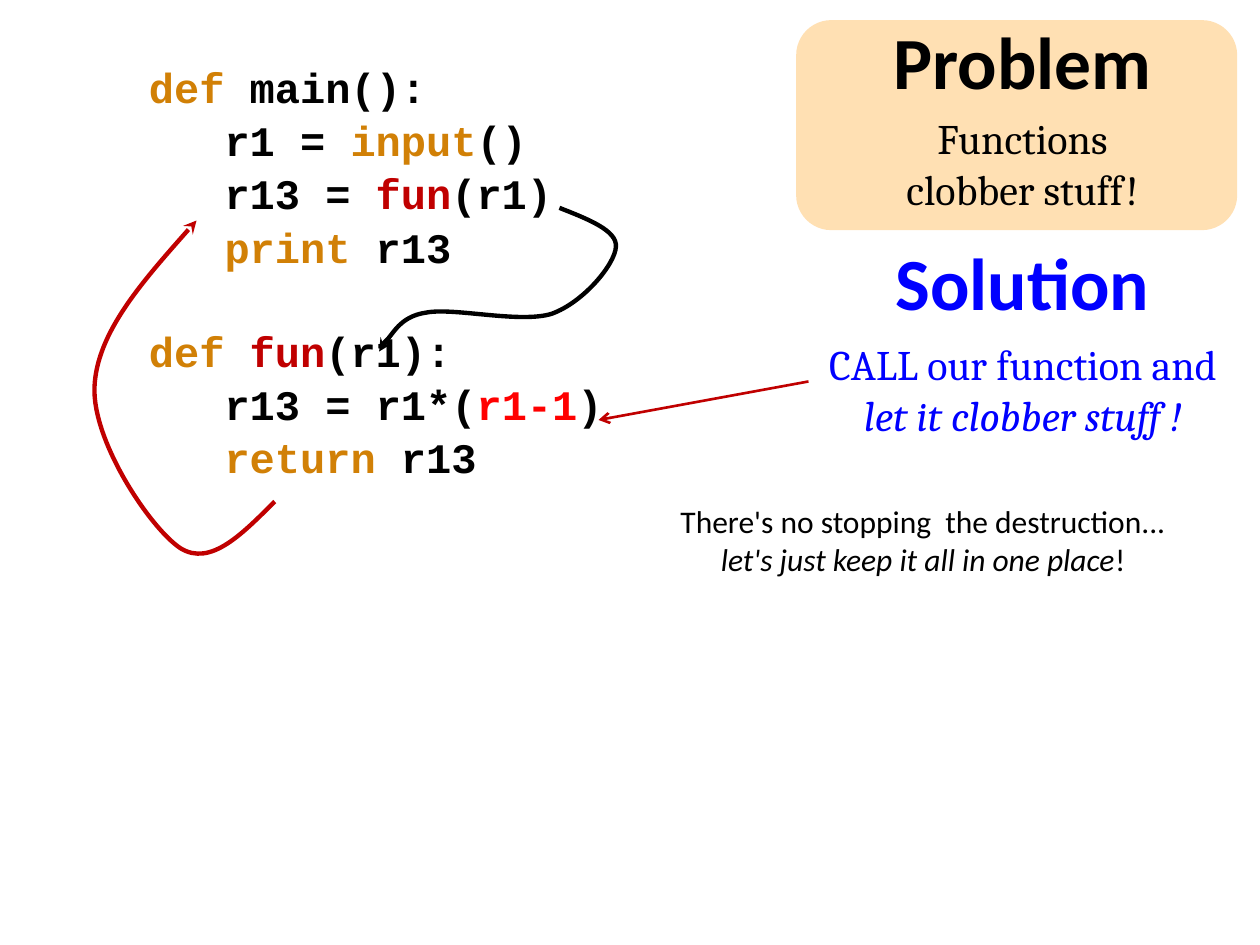
from pptx import Presentation
from pptx.dml.color import RGBColor
from pptx.enum.shapes import MSO_CONNECTOR, MSO_SHAPE
from pptx.enum.text import MSO_ANCHOR, MSO_AUTO_SIZE, PP_ALIGN
from pptx.oxml.ns import qn
from pptx.util import Pt
from lxml import etree

BLACK = RGBColor(0x00, 0x00, 0x00)
BLUE = RGBColor(0x00, 0x00, 0xFF)
KEYWORD = RGBColor(0xD1, 0x80, 0x06)
DARK_RED = RGBColor(0xC0, 0x00, 0x00)
RED = RGBColor(0xFF, 0x00, 0x00)
PEACH = RGBColor(0xFF, 0xE0, 0xB3)

CODE = {"name": "Courier New", "size": Pt(24), "bold": True}
HEADING = {"name": "Calibri", "size": Pt(42), "bold": True}
MESSAGE = {"name": "Cambria", "size": Pt(24), "bold": False}
REMARK = {"name": "Calibri", "size": Pt(18), "bold": False}

INDENT = Pt(43.2)  # three Courier New characters at 24 pt
LINE_GAP = 13
BLANK_LINE = 29.2

# Each line: indent level, blank lines above, coloured pieces
CODE_LINES = [
    (0, 0, [("def", KEYWORD), (" main():", BLACK)]),
    (1, 0, [("r1 = ", BLACK), ("input", KEYWORD), ("()", BLACK)]),
    (1, 0, [("r13 = ", BLACK), ("fun", DARK_RED), ("(r1)", BLACK)]),
    (1, 0, [("print", KEYWORD), (" r13", BLACK)]),
    (0, 1, [("def ", KEYWORD), ("fun", DARK_RED), ("(r1):", BLACK)]),
    (1, 0, [("r13 = r1*(", BLACK), ("r1-1", RED), (")", BLACK)]),
    (1, 0, [("return ", KEYWORD), ("r13", BLACK)]),
]

# Start point, then two control points and an end point per curve
RETURN_PATH = [
    (157, 286.6), (138.2, 305.3), (120.2, 324), (103, 313.2),
    (85.7, 301.7), (52.6, 252), (54, 221), (55.4, 190), (84.2, 157.7), (112.3, 126),
]
CALL_PATH = [
    (319.7, 118.8), (336.2, 125.3), (352.8, 131.8), (352, 141.1),
    (351.4, 151.2), (333.4, 172.8), (315.4, 179.3),
    (297.4, 185), (259.9, 175.7), (244, 178.6),
    (228.2, 180.7), (224.6, 191.5), (220.3, 195.1), (216, 199.4), (216, 200.2), (216.7, 200.9),
]


def add_run(paragraph, text, style, color, italic=False):
    run = paragraph.add_run()
    run.text = text
    for attribute, value in {**style, "italic": italic}.items():
        setattr(run.font, attribute, value)
    run.font.color.rgb = color


def prepare_frame(shape):
    settings = {"word_wrap": True, "auto_size": MSO_AUTO_SIZE.NONE,
                "vertical_anchor": MSO_ANCHOR.TOP}
    for attribute, value in settings.items():
        setattr(shape.text_frame, attribute, value)
    return shape.text_frame


def add_box(slide, box):
    return slide.shapes.add_textbox(*map(Pt, box))


def fill_centered(shape, style, color, pieces):
    paragraph = prepare_frame(shape).paragraphs[0]
    paragraph.alignment = PP_ALIGN.CENTER
    for text, italic in pieces:
        add_run(paragraph, text, style, color, italic)
    return paragraph


def style_line(shape, color, width, arrow):
    shape.line.color.rgb = color
    shape.line.width = Pt(width)
    etree.SubElement(shape.line._get_or_add_ln(), qn("a:tailEnd"), type=arrow)


def add_code(slide, box):
    frame = prepare_frame(add_box(slide, box))
    for number, (level, blanks, pieces) in enumerate(CODE_LINES):
        paragraph = frame.add_paragraph() if number else frame.paragraphs[0]
        paragraph.line_spacing = 0.6
        paragraph.space_before = Pt(LINE_GAP + blanks * BLANK_LINE)
        properties = paragraph._p.get_or_add_pPr()
        properties.set("marL", str(level * INDENT))
        properties.set("indent", "0")
        for text, color in pieces:
            add_run(paragraph, text, CODE, color)


def add_problem(slide, box):
    left, top, width, height = box
    panel = slide.shapes.add_shape(MSO_SHAPE.ROUNDED_RECTANGLE, *map(Pt, box))
    panel.shadow.inherit = False
    panel.fill.solid()
    panel.fill.fore_color.rgb = PEACH
    panel.line.fill.background()

    # The title lies on the panel
    title = slide.shapes.title
    place = {"left": left + 24.5, "top": top - 6, "width": 209.5, "height": 58}
    for attribute, value in place.items():
        setattr(title, attribute, Pt(value))
    fill_centered(title, HEADING, BLACK, [("Problem", False)])
    panel._element.addnext(title._element)

    message = add_box(slide, (left + 37, top + 49.5, 184.5, 65.5))
    fill_centered(message, MESSAGE, BLACK, [("Functions clobber stuff!", False)])


def add_solution(slide, box):
    left, top, width, height = box
    heading = add_box(slide, (left + 23.5, top, 209.5, 58))
    fill_centered(heading, HEADING, BLUE, [("Solution", False)])
    message = add_box(slide, (left, top + 58, width, height - 58))
    fill_centered(message, MESSAGE, BLUE,
                  [("CALL our function and ", False), ("let it clobber stuff !", True)])


def add_remark(slide, box):
    fill_centered(add_box(slide, box), REMARK, BLACK, [
        ("There's no stopping  the destruction... ", False),
        ("let's just keep it all in one place", True), ("!", False)])


def add_pointer(slide, start, end):
    pointer = slide.shapes.add_connector(MSO_CONNECTOR.STRAIGHT, *map(Pt, start + end))
    style_line(pointer, DARK_RED, 1.5, "arrow")
    etree.SubElement(pointer._element.spPr, qn("a:effectLst"))


def add_curve(slide, points, color):
    start, *others = [(Pt(x), Pt(y)) for x, y in points]
    builder = slide.shapes.build_freeform(*start)
    builder.add_line_segments(others, close=False)
    curve = builder.convert_to_shape()
    curve.shadow.inherit = False
    curve.fill.background()
    style_line(curve, color, 2.5, "stealth")

    # Every three straight segments become one cubic curve
    outline = curve._element.find(".//" + qn("a:path"))
    segments = outline.findall(qn("a:lnTo"))
    for first in range(0, len(segments), 3):
        cubic = etree.SubElement(outline, qn("a:cubicBezTo"))
        for segment in segments[first:first + 3]:
            cubic.append(segment[0])
            outline.remove(segment)


def main():
    presentation = Presentation()
    presentation.slide_width, presentation.slide_height = Pt(720), Pt(540)
    slide = presentation.slides.add_slide(presentation.slide_layouts[5])
    add_problem(slide, (455, 11.5, 252, 120))
    add_code(slide, (78, 42, 420, 251))
    add_solution(slide, (456, 132, 257, 123.5))
    add_pointer(slide, (462, 218), (342, 240))
    add_remark(slide, (368, 283.5, 319, 51))
    add_curve(slide, RETURN_PATH, DARK_RED)
    add_curve(slide, CALL_PATH, BLACK)
    presentation.save("out.pptx")


if __name__ == "__main__":
    main()
